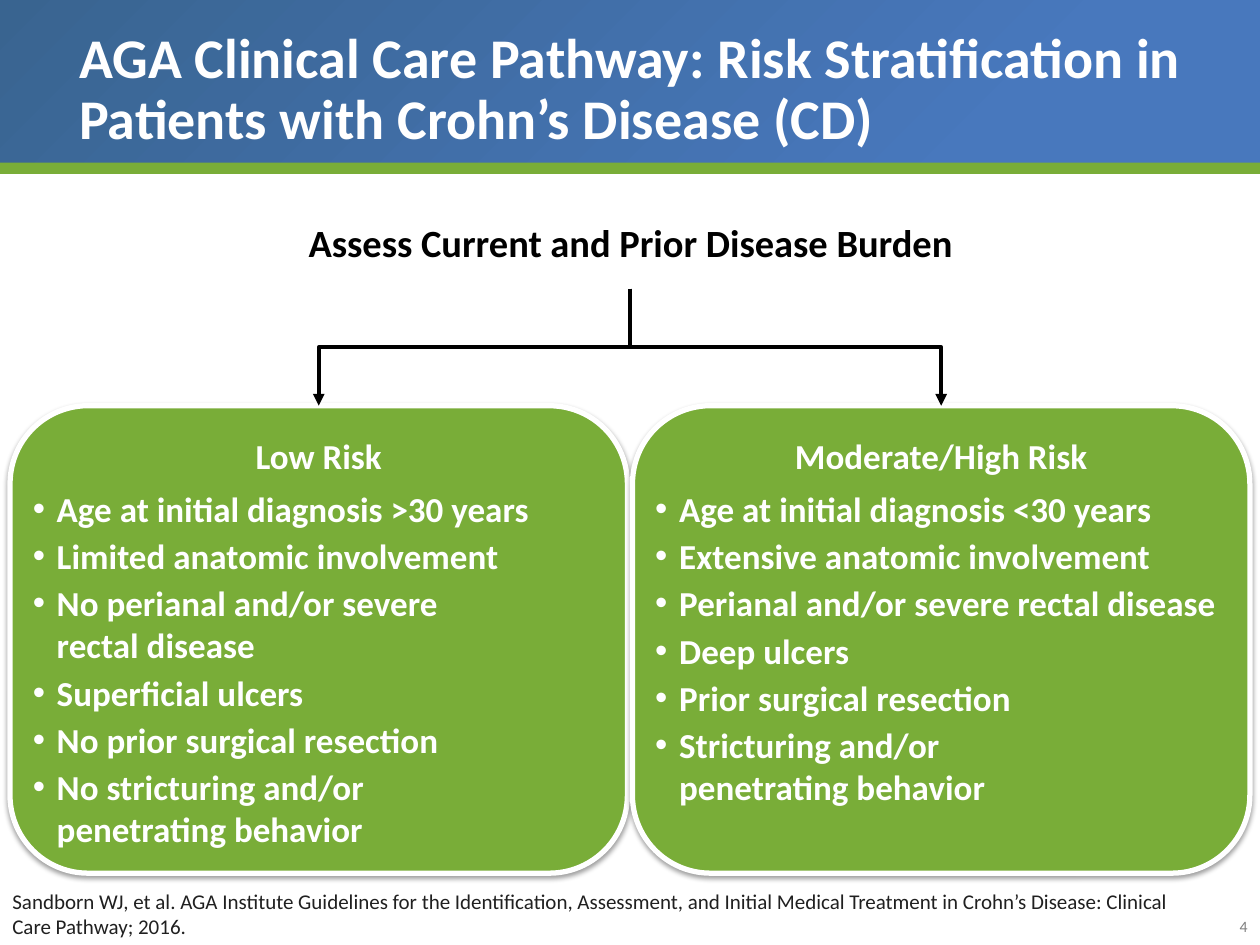
from pptx import Presentation
from pptx.dml.color import RGBColor
from pptx.enum.shapes import MSO_CONNECTOR, MSO_SHAPE
from pptx.enum.text import MSO_ANCHOR, PP_ALIGN
from pptx.oxml import parse_xml
from pptx.oxml.ns import nsdecls, qn
from pptx.util import Inches, Pt

RECT, ROUND = MSO_SHAPE.RECTANGLE, MSO_SHAPE.ROUNDED_RECTANGLE
ELBOW = MSO_CONNECTOR.ELBOW
TOP, MIDDLE, BOTTOM = MSO_ANCHOR.TOP, MSO_ANCHOR.MIDDLE, MSO_ANCHOR.BOTTOM
LEFT, CENTER, RIGHT = PP_ALIGN.LEFT, PP_ALIGN.CENTER, PP_ALIGN.RIGHT

# Content
TITLE = "AGA Clinical Care Pathway: Risk Stratification in Patients with Crohn’s Disease (CD)"
START = "Assess Current and Prior Disease Burden"
CARDS = [
    ("Low Risk", [
        "Age at initial diagnosis >30 years",
        "Limited anatomic involvement",
        "No perianal and/or severe\vrectal disease",
        "Superficial ulcers",
        "No prior surgical resection",
        "No stricturing and/or\vpenetrating behavior",
    ]),
    ("Moderate/High Risk", [
        "Age at initial diagnosis <30 years",
        "Extensive anatomic involvement",
        "Perianal and/or severe rectal disease",
        "Deep ulcers",
        "Prior surgical resection",
        "Stricturing and/or\vpenetrating behavior",
    ]),
]
SOURCE = ("Sandborn WJ, et al. AGA Institute Guidelines for the Identification, "
          "Assessment, and Initial Medical Treatment in Crohn’s Disease: "
          "Clinical Care Pathway; 2016.")
PAGE = "4"

FONT = "Calibri"
COLORS = {"dark": "396490", "blue": "4878BD", "green": "79AD38", "white": "FFFFFF",
          "black": "000000", "ink": "202020", "gray": "7F7F7F"}

# Layout in inches
WIDTH, HEIGHT = 10, 7.5
MID = WIDTH / 2
START_BOX = (1.86, 1.56, 6.29, 0.73)
CARD_TOP, CARD_W, CARD_H, CARD_GAP = 3.22, 4.9, 3.71, 0.04
INDENT = 0.19


def color(name):
    return RGBColor.from_string(COLORS[name])


def style(par, size, tint, bold=False, align=LEFT):
    par.alignment = align
    for run in par.runs:
        font = run.font
        font.name, font.size, font.bold = FONT, Pt(size), bold
        font.color.rgb = color(tint)


def add_box(kind, box, fill):
    shape = slide.shapes.add_shape(kind, *map(Inches, box))
    shape.shadow.inherit = False
    shape.fill.solid()
    shape.fill.fore_color.rgb = color(fill)
    shape.line.fill.background()
    return shape


def add_text(box, text, size, tint, bold=False, align=LEFT, anchor=TOP):
    frame = slide.shapes.add_textbox(*map(Inches, box)).text_frame
    frame.word_wrap = True
    frame.vertical_anchor = anchor
    frame.text = text
    style(frame.paragraphs[0], size, tint, bold, align)
    return frame


def add_bullet(par):
    props = par._p.get_or_add_pPr()
    props.set("marL", str(Inches(INDENT)))
    props.set("indent", str(-Inches(INDENT)))
    props.append(parse_xml(f'<a:buFont {nsdecls("a")} typeface="Arial"/>'))
    props.append(parse_xml(f'<a:buChar {nsdecls("a")} char="•"/>'))


def add_card(left, head, items):
    card = add_box(ROUND, (left, CARD_TOP, CARD_W, CARD_H), "green")
    card.line.color.rgb = color("white")
    card.line.width = Pt(3)
    card._element.spPr.find(qn("a:effectLst")).append(parse_xml(
        f'<a:outerShdw {nsdecls("a")} blurRad="{Pt(3.1)}" dist="{Pt(1.6)}" '
        f'dir="5400000" rotWithShape="0"><a:srgbClr val="{COLORS["black"]}">'
        '<a:alpha val="38000"/></a:srgbClr></a:outerShdw>'))
    frame = card.text_frame
    frame.word_wrap = True
    frame.vertical_anchor = TOP
    frame.margin_left = frame.margin_right = 0
    frame.text = head
    style(frame.paragraphs[0], 20, "white", True, CENTER)
    frame.paragraphs[0].space_after = Pt(6)
    for item in items:
        par = frame.add_paragraph()
        par.text = item
        add_bullet(par)
        par.space_after = Pt(3)
        style(par, 20, "white", True)


def add_arrow(end):
    """Elbow that leaves the start box downward and ends on top of a card."""
    top = START_BOX[1] + START_BOX[3]
    drop, span = CARD_TOP - top, abs(end - MID)
    x, y = (MID + end) / 2, (top + CARD_TOP) / 2
    # The elbow runs sideways first, so it is laid flat and then turned
    side = 1 if end < MID else -1
    ends = (x - side * drop / 2, y - span / 2, x + side * drop / 2, y + span / 2)
    arrow = slide.shapes.add_connector(ELBOW, *map(Inches, ends))
    arrow.line.color.rgb = color("black")
    arrow.line.width = Pt(2.25)
    props = arrow._element.spPr
    props.find(qn("a:xfrm")).set("rot", str((90 if side > 0 else 270) * 60000))
    props.find(qn("a:ln")).append(parse_xml(
        f'<a:tailEnd {nsdecls("a")} type="triangle"/>'))
    props.append(parse_xml(f'<a:effectLst {nsdecls("a")}/>'))


prs = Presentation()
prs.slide_width, prs.slide_height = Inches(WIDTH), Inches(HEIGHT)
slide = prs.slides.add_slide(prs.slide_layouts[6])

# Header band with a gradient spreading from the top left corner
band = add_box(RECT, (0, 0, WIDTH, 1.37), "blue")
band.fill.gradient()
for stop, (tint, place) in zip(band.fill.gradient_stops, [("dark", 0), ("blue", 0.79)]):
    stop.color.rgb = color(tint)
    stop.position = place
grad = band._element.spPr.find(qn("a:gradFill"))
grad.replace(grad.find(qn("a:lin")), parse_xml(
    f'<a:path {nsdecls("a")} path="circle">'
    '<a:fillToRect r="100000" b="100000"/></a:path>'))
add_text((9.58, 7.23, 0.42, 0.25), PAGE, 9, "gray", align=RIGHT)
add_box(RECT, (0, 1.29, WIDTH, 0.09), "green")
title = add_text((0.53, 0.11, 9.01, 1.14), TITLE, 32, "white", True, anchor=BOTTOM)
title.paragraphs[0].line_spacing = 0.9

# Starting question
start = add_box(ROUND, START_BOX, "white").text_frame
start.word_wrap = True
start.vertical_anchor = MIDDLE
start.text = START
style(start.paragraphs[0], 22, "black", True, CENTER)

# Risk cards, then the arrows that lead to them
first = MID - CARD_W - CARD_GAP / 2
lefts = [first + i * (CARD_W + CARD_GAP) for i in range(len(CARDS))]
for left, (head, items) in zip(lefts, CARDS):
    add_card(left, head, items)
for left in lefts:
    add_arrow(left + CARD_W / 2)

# Citation
add_text((0, 7, 9.64, 0.5), SOURCE, 12, "ink")

prs.save("out.pptx")
